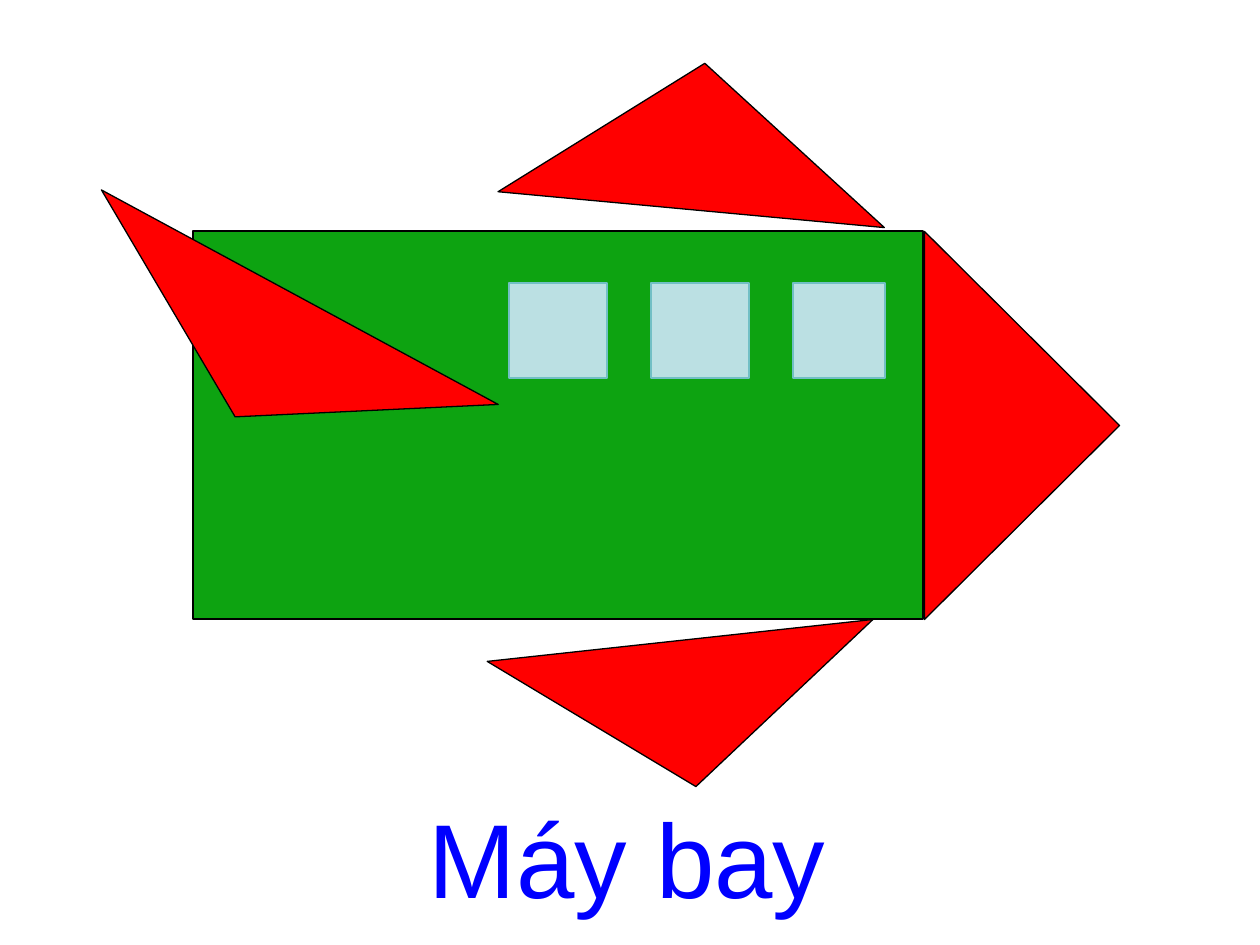
"""Build a slide of an aeroplane made of simple shapes, with its Vietnamese name."""
from pptx import Presentation
from pptx.dml.color import RGBColor
from pptx.enum.shapes import MSO_SHAPE as Shape
from pptx.enum.text import MSO_ANCHOR as Anchor, PP_ALIGN as Align
from pptx.util import Emu, Pt

SCALE = 914400 / 126
COLORS = {
    "body": "0DA311",
    "wing": "FF0000",
    "outline": "000000",
    "glass": "BBE0E3",
    "frame": "72BFC5",
    "title": "0000FF",
}


def add_part(kind, box, fill, line="outline", width=0.75, rotation=0):
    part = slide.shapes.add_shape(kind, *(Emu(round(v * SCALE)) for v in box))
    part.rotation = rotation
    part.shadow.inherit = False
    part.fill.solid()
    part.fill.fore_color.rgb = RGBColor.from_string(COLORS[fill])
    part.line.color.rgb = RGBColor.from_string(COLORS[line])
    part.line.width = Pt(width)


def add_text(text, box, size, color, font="Arial", align=Align.CENTER, top=0):
    label = slide.shapes.add_textbox(*(Emu(round(v * SCALE)) for v in box))
    frame = label.text_frame
    frame.word_wrap = True
    frame.vertical_anchor = Anchor.TOP
    frame.margin_top = Emu(round(top * SCALE))
    frame.margin_bottom = 0
    paragraph = frame.paragraphs[0]
    paragraph.alignment = align
    run = paragraph.add_run()
    run.text = text
    run.font.name = font
    run.font.size = Pt(size)
    run.font.color.rgb = RGBColor.from_string(COLORS[color])


deck = Presentation()
deck.slide_width = Emu(round(1260 * SCALE))
deck.slide_height = Emu(round(945 * SCALE))
slide = deck.slides.add_slide(deck.slide_layouts[6])

add_part(Shape.RECTANGLE, (364, 60, 388, 730), "body", rotation=90)

nose = (828, 328, 388, 195), 90
upper_wing = (504, 63, 388, 147), 5.3
lower_wing = (494, 640, 388, 147), 173.8
tail = (42, 289, 451, 136), 208.4
for box, rotation in (nose, upper_wing, lower_wing, tail):
    add_part(Shape.ISOSCELES_TRIANGLE, box, "wing", rotation=rotation)

add_text("Máy bay", (155, 777, 944, 120), size=60, color="title", top=16)

for left, window_width in ((793, 92), (651, 98), (509, 98)):
    add_part(Shape.RECTANGLE, (left, 283, window_width, 95), "glass", line="frame", width=1)

deck.save("out.pptx")
